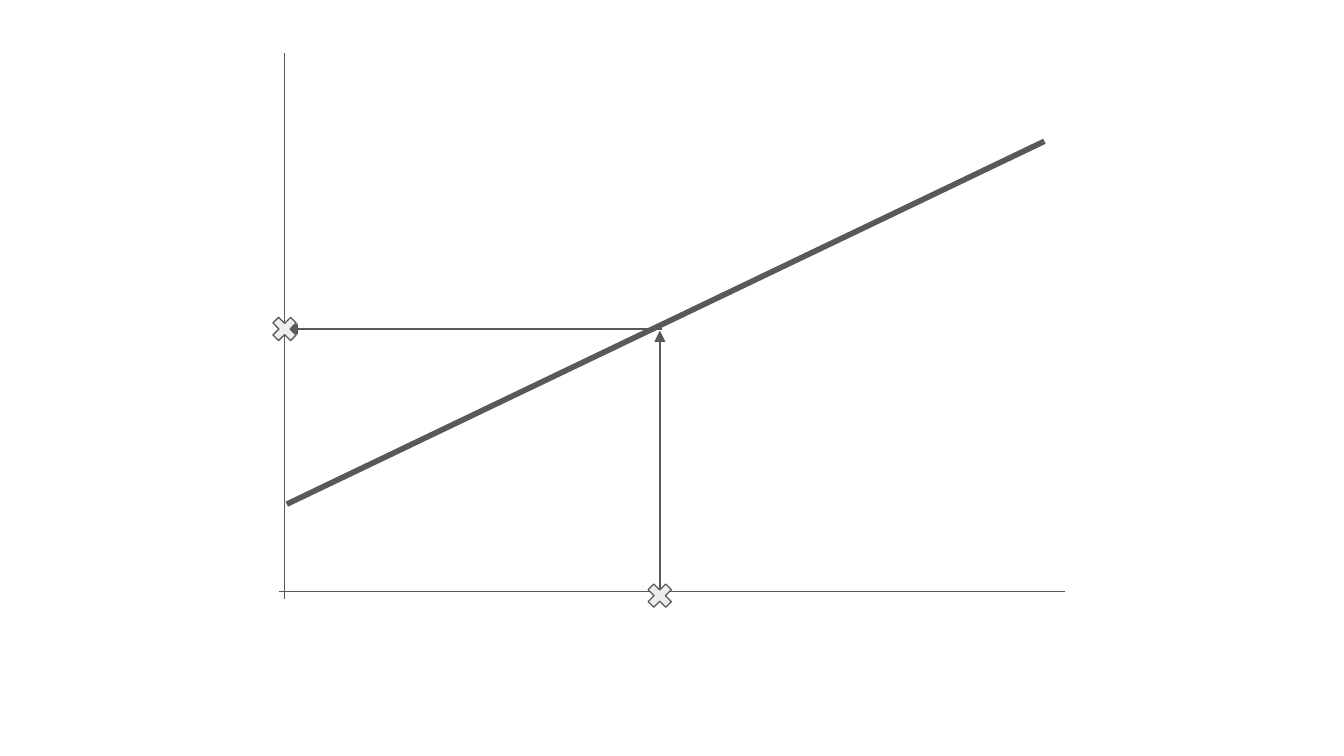
from lxml import etree
from pptx import Presentation
from pptx.dml.color import RGBColor
from pptx.enum.shapes import MSO_CONNECTOR, MSO_SHAPE
from pptx.oxml.ns import qn
from pptx.util import Cm, Pt

STRAIGHT = MSO_CONNECTOR.STRAIGHT
CROSS = MSO_SHAPE.MATH_MULTIPLY
GRAY = RGBColor(0x59, 0x59, 0x59)
LIGHT = RGBColor(0xEE, 0xEE, 0xEE)

AXIS_X = 5.38
AXIS_Y = 11.18
INPUT_X = 12.47
OUTPUT_Y = 6.22


class Diagram:
    color = GRAY
    fill = LIGHT
    thin = 0.75
    marker_size = 0.64

    def __init__(self, page):
        self.shapes = page.shapes

    def line(self, start, end, width=thin):
        points = [Cm(value) for value in (*start, *end)]
        connector = self.shapes.add_connector(STRAIGHT, *points)
        connector.line.color.rgb = self.color
        connector.line.width = Pt(width)
        etree.SubElement(connector._element.spPr, qn("a:effectLst"))
        return connector

    def arrow(self, start, end):
        connector = self.line(start, end)
        outline = connector._element.spPr.find(qn("a:ln"))
        etree.SubElement(outline, qn("a:tailEnd"), type="triangle")

    def marker(self, x, y):
        size = self.marker_size
        cross = self.shapes.add_shape(
            CROSS, Cm(x - size / 2), Cm(y - size / 2), Cm(size), Cm(size))
        cross.adjustments[0] = 0.235
        cross.shadow.inherit = False
        cross.fill.solid()
        cross.fill.fore_color.rgb = self.fill
        cross.line.color.rgb = self.color
        cross.line.width = Pt(self.thin)


def main():
    deck = Presentation()
    deck.slide_width = Cm(25.4)
    deck.slide_height = Cm(14.29)
    diagram = Diagram(deck.slides.add_slide(deck.slide_layouts[6]))

    diagram.line((AXIS_X, 1), (AXIS_X, 11.33))
    diagram.line((5.28, AXIS_Y), (20.12, AXIS_Y))
    diagram.line((5.42, 9.53), (19.74, 2.67), width=3)
    diagram.arrow((INPUT_X, AXIS_Y), (INPUT_X, 6.25))
    diagram.arrow((12.52, OUTPUT_Y), (5.42, OUTPUT_Y))
    diagram.marker(INPUT_X, 11.26)
    diagram.marker(AXIS_X, OUTPUT_Y)

    deck.save("out.pptx")


if __name__ == "__main__":
    main()
